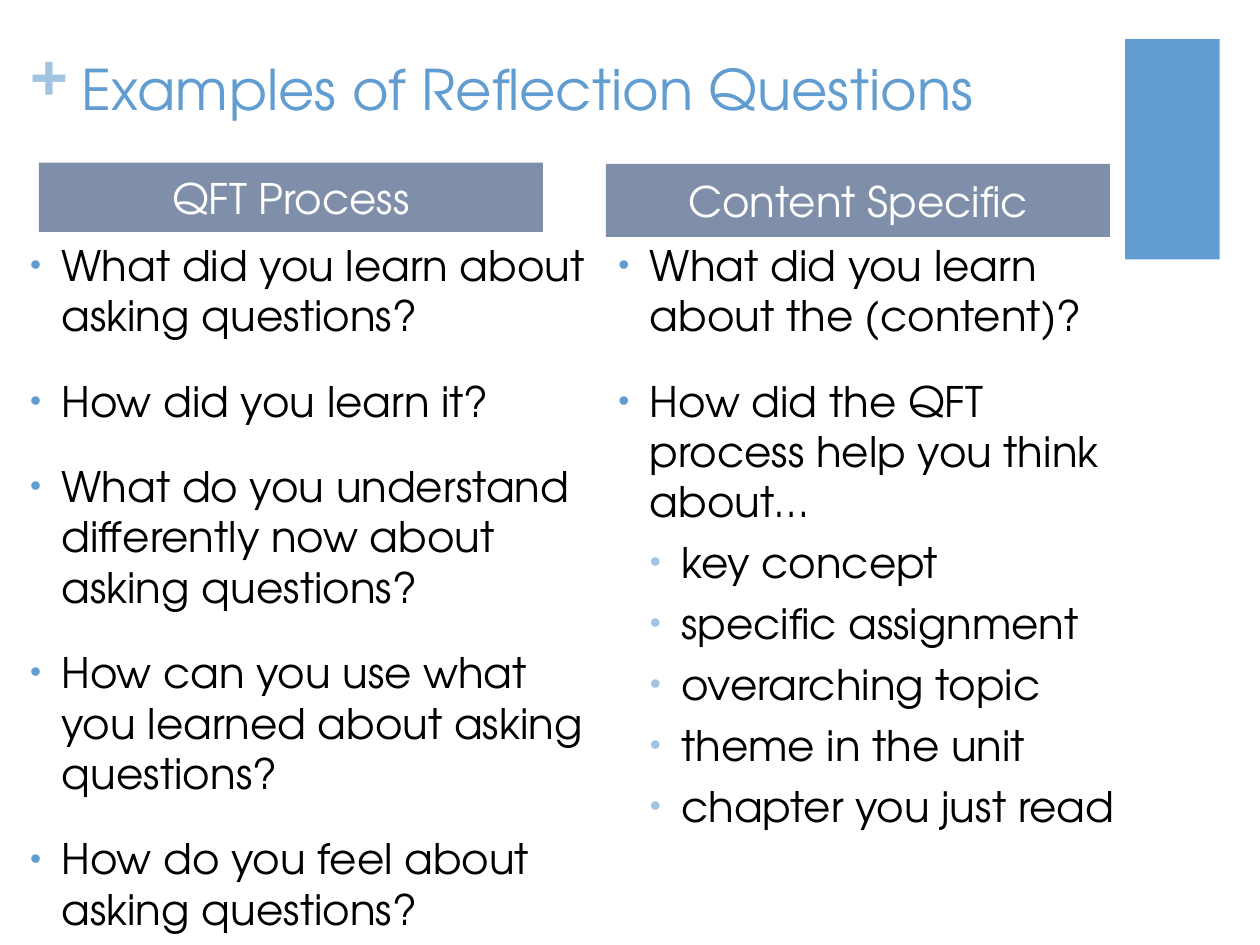
import pptx
import pptx.util
import pptx.dml.color
import pptx.enum.shapes
import pptx.enum.text
import pptx.oxml.ns
import lxml.etree

RGBColor = pptx.dml.color.RGBColor
Anchor = pptx.enum.text.MSO_ANCHOR
Align = pptx.enum.text.PP_ALIGN

BLUE = RGBColor(0x62, 0x9D, 0xD1)
PALE_BLUE = RGBColor(0xA1, 0xC4, 0xE3)
SLATE = RGBColor(0x7F, 0x8F, 0xA9)
BLACK = RGBColor(0, 0, 0)
WHITE = RGBColor(0xFF, 0xFF, 0xFF)

COLUMNS, ROWS = 100, 75
BULLET_LEVELS = [(20, BLUE), (6, PALE_BLUE)]

PROCESS_QUESTIONS = [
    (0, "What did you learn about asking questions?"),
    (0, "How did you learn it?"),
    (0, "What do you understand differently now about asking questions?"),
    (0, "How can you use what you learned about asking questions?"),
    (0, "How do you feel about asking questions?"),
]
CONTENT_QUESTIONS = [
    (0, "What did you learn about the (content)?"),
    (0, "How did the QFT process help you think about…"),
    (1, "key concept"),
    (1, "specific assignment"),
    (1, "overarching topic"),
    (1, "theme in the unit"),
    (1, "chapter you just read"),
]


class SlideBuilder:
    font_name = "TeX Gyre Adventor"
    body_size = 24
    indent = pptx.util.Inches(0.25)

    def __init__(self, deck):
        self.slide = deck.slides.add_slide(deck.slide_layouts[6])
        self.column = deck.slide_width / COLUMNS
        self.row = deck.slide_height / ROWS

    def place(self, left, top, width, height):
        return (round(left * self.column), round(top * self.row),
                round(width * self.column), round(height * self.row))

    def style(self, paragraph, color, size=None, font_name=None, bold=False):
        font = paragraph.font
        font.name = font_name or self.font_name
        font.size = pptx.util.Pt(size or self.body_size)
        font.bold = bold
        font.color.rgb = color

    def block(self, area, fill):
        block = self.slide.shapes.add_shape(
            pptx.enum.shapes.MSO_SHAPE.RECTANGLE, *self.place(*area))
        block.shadow.inherit = False
        block.fill.solid()
        block.fill.fore_color.rgb = fill
        block.line.fill.background()
        return block

    def heading(self, area, text):
        frame = self.block(area, SLATE).text_frame
        frame.margin_top = frame.margin_bottom = 0
        frame.vertical_anchor = Anchor.MIDDLE
        heading = frame.paragraphs[0]
        heading.text = text
        heading.alignment = Align.CENTER
        self.style(heading, WHITE)

    def text_frame(self, area):
        frame = self.slide.shapes.add_textbox(*self.place(*area)).text_frame
        frame.word_wrap = True
        frame.vertical_anchor = Anchor.TOP
        return frame

    def title(self, area, text):
        title = self.text_frame(area).paragraphs[0]
        title.text = text
        self.style(title, BLUE, size=32)

    def plus_mark(self, area):
        frame = self.text_frame(area)
        frame.margin_left = frame.margin_right = 0
        frame.margin_top = frame.margin_bottom = 0
        frame.word_wrap = False
        mark = frame.paragraphs[0]
        mark.text = "+"
        self.style(mark, PALE_BLUE, size=36, font_name="TeX Gyre Bonum", bold=True)

    def bullet(self, paragraph, level, color):
        properties = paragraph._p.get_or_add_pPr()
        properties.set("marL", str(self.indent * (level + 1)))
        properties.set("indent", str(-self.indent))
        qn = pptx.oxml.ns.qn
        bullet_color = lxml.etree.SubElement(properties, qn("a:buClr"))
        lxml.etree.SubElement(bullet_color, qn("a:srgbClr"), val=str(color))
        lxml.etree.SubElement(properties, qn("a:buSzPct"), val="75000")
        lxml.etree.SubElement(properties, qn("a:buFont"), typeface="Arial")
        lxml.etree.SubElement(properties, qn("a:buChar"), char="•")

    def questions(self, area, items):
        frame = self.text_frame(area)
        for index, (level, text) in enumerate(items):
            question = frame.add_paragraph() if index else frame.paragraphs[0]
            space_before, bullet_color = BULLET_LEVELS[level]
            question.text = text
            question.level = level
            question.space_before = pptx.util.Pt(space_before)
            self.bullet(question, level, bullet_color)
            self.style(question, BLACK)


def main():
    deck = pptx.Presentation()
    deck.slide_width = pptx.util.Inches(10)
    deck.slide_height = pptx.util.Inches(7.5)

    builder = SlideBuilder(deck)
    builder.block((89.3, 3.1, 7.5, 17.5), BLUE)
    builder.plus_mark((2.4, 2.5, 2.9, 6.1))
    builder.title((5.5, 3.8, 82.6, 7.7), "Examples of Reflection Questions")
    builder.questions((1.4, 18.5, 46.7, 51), PROCESS_QUESTIONS)
    builder.questions((48.1, 18.5, 41.8, 52.4), CONTENT_QUESTIONS)
    builder.heading((3.1, 12.9, 40, 5.5), "QFT Process")
    builder.heading((48.1, 13, 40, 5.8), "Content Specific")
    deck.save("out.pptx")


if __name__ == "__main__":
    main()
